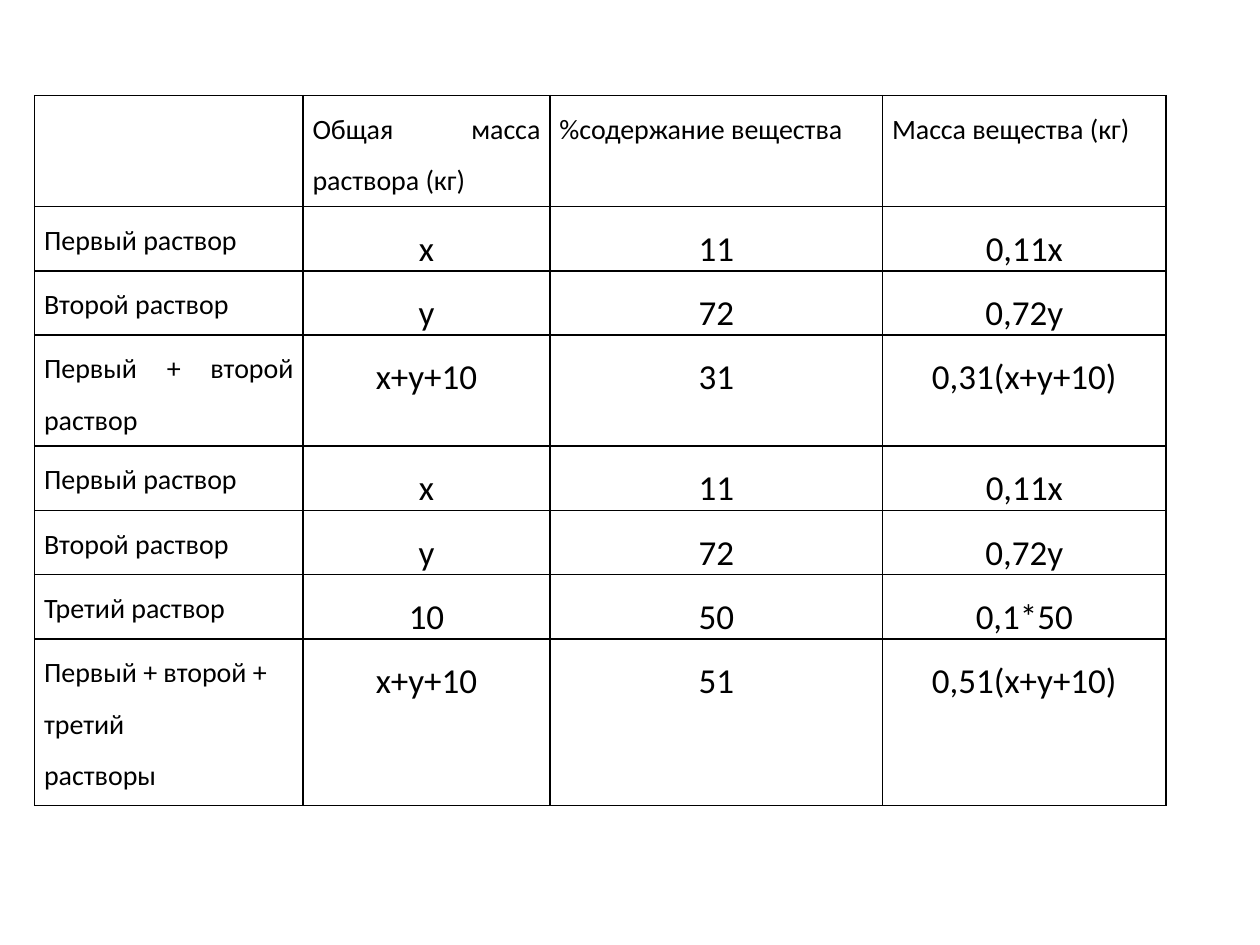
from lxml import etree
from pptx import Presentation
from pptx.dml.color import RGBColor
from pptx.enum.text import PP_ALIGN
from pptx.oxml.ns import qn
from pptx.util import Pt

JUSTIFY = PP_ALIGN.JUSTIFY
CENTER = PP_ALIGN.CENTER
COLORS = {"ink": "000000"}

COL_WIDTHS = [153.4, 141.1, 190.1, 162]
LINE_HEIGHT = 31.7
SINGLE_HEIGHT = 33.1
ROWS = [
    ("", "Общая масса раствора (кг)", "%содержание вещества", "Масса вещества (кг)"),
    ("Первый раствор", "х", "11", "0,11х"),
    ("Второй раствор", "у", "72", "0,72у"),
    ("Первый + второй раствор", "х+у+10", "31", "0,31(х+у+10)"),
    ("Первый раствор", "х", "11", "0,11х"),
    ("Второй раствор", "у", "72", "0,72у"),
    ("Третий раствор", "10", "50", "0,1*50"),
    ("Первый + второй +\nтретий\nрастворы", "х+у+10", "51", "0,51(х+у+10)"),
]
ROW_LINES = [2, 1, 1, 2, 1, 1, 1, 3]


class Deck:
    font = "Calibri"
    label_size = 16
    value_size = 20
    line_spacing = 1.5
    inset = 5.4
    border = 1

    def __init__(self, width, height):
        self.prs = Presentation()
        self.prs.slide_width, self.prs.slide_height = Pt(width), Pt(height)
        self.s = None

    def blank_slide(self):
        self.s = self.prs.slides.add_slide(self.prs.slide_layouts[6])

    def borders(self, cell):
        tc_pr = cell._tc.get_or_add_tcPr()
        for side in ("a:lnL", "a:lnR", "a:lnT", "a:lnB"):
            ln = etree.SubElement(tc_pr, qn(side), w=str(Pt(self.border)))
            fill = etree.SubElement(ln, qn("a:solidFill"))
            etree.SubElement(fill, qn("a:srgbClr"), val=COLORS["ink"])

    def cell(self, cell, text, is_label):
        cell.margin_left = cell.margin_right = Pt(self.inset)
        cell.margin_top = cell.margin_bottom = 0
        self.borders(cell)
        cell.fill.background()
        cell.text_frame.text = text
        for p in cell.text_frame.paragraphs:
            p.alignment = JUSTIFY if is_label else CENTER
            p.line_spacing = self.line_spacing
            for r in p.runs:
                r.font.name = self.font
                r.font.size = Pt(self.label_size if is_label else self.value_size)
                r.font.color.rgb = RGBColor.from_string(COLORS["ink"])

    def table(self, left, top, rows, widths, heights):
        table = self.s.shapes.add_table(
            len(rows), len(widths), Pt(left), Pt(top),
            Pt(sum(widths)), Pt(sum(heights))).table
        table.first_row = table.horz_banding = False
        for column, width in zip(table.columns, widths):
            column.width = Pt(width)
        for i, (texts, height) in enumerate(zip(rows, heights)):
            table.rows[i].height = Pt(height)
            for j, text in enumerate(texts):
                self.cell(table.cell(i, j), text, i == 0 or j == 0)


def main():
    deck = Deck(720, 540)
    deck.blank_slide()
    heights = [SINGLE_HEIGHT if n == 1 else n * LINE_HEIGHT for n in ROW_LINES]
    deck.table(19.8, 54.6, ROWS, COL_WIDTHS, heights)
    deck.prs.save("out.pptx")


if __name__ == "__main__":
    main()
